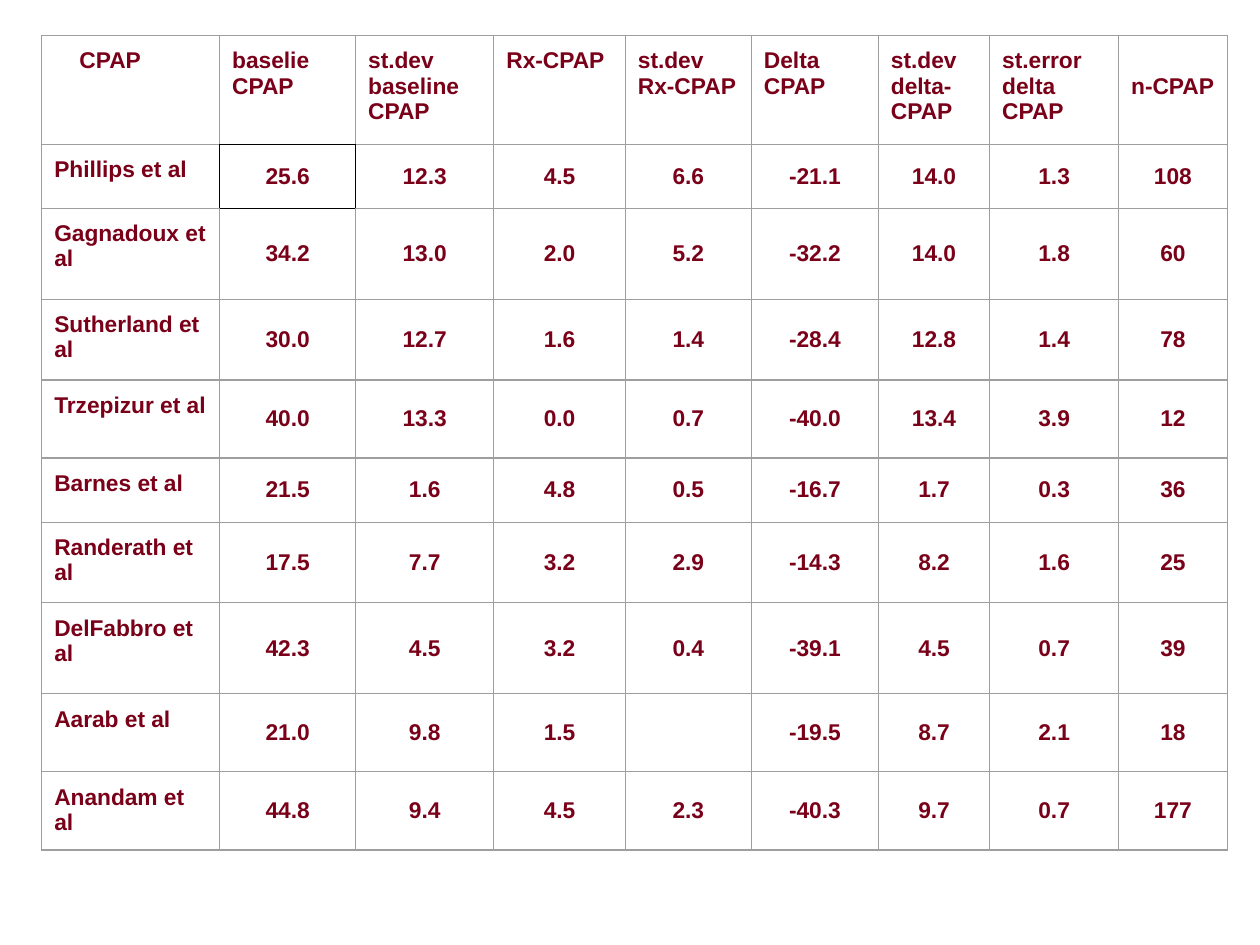
from lxml.etree import SubElement
from pptx import Presentation
from pptx.dml.color import RGBColor
from pptx.enum.text import MSO_ANCHOR, PP_ALIGN
from pptx.oxml.ns import qn
from pptx.util import Pt

COLORS = {"text": "7A0019", "grid": "9E9E9E", "highlight": "000000"}
COLUMN_WIDTHS = [101.7, 77.7, 79, 75.2, 72, 72.6, 63.6, 73.7, 62.1]
ROW_HEIGHTS = [62, 36.6, 52, 46.2, 44.6, 36.6, 46.2, 52, 44.6, 44.6]
PADDING = 7.2
HIGHLIGHT_CELL = (1, 1)
# Border tag -> row and column offset of the neighbour on that side
SIDES = {"a:lnL": (0, -1), "a:lnR": (0, 1), "a:lnT": (-1, 0), "a:lnB": (1, 0)}

HEADERS = [
    "CPAP", "baselie\nCPAP", "st.dev\nbaseline\nCPAP", "Rx-CPAP",
    "st.dev Rx-CPAP", "Delta\nCPAP", "st.dev\ndelta-\nCPAP",
    "st.error\ndelta\nCPAP", "n-CPAP",
]
STUDIES = [
    ["Phillips et al", "25.6", "12.3", "4.5", "6.6", "-21.1", "14.0", "1.3", "108"],
    ["Gagnadoux et al", "34.2", "13.0", "2.0", "5.2", "-32.2", "14.0", "1.8", "60"],
    ["Sutherland et al", "30.0", "12.7", "1.6", "1.4", "-28.4", "12.8", "1.4", "78"],
    ["Trzepizur et al", "40.0", "13.3", "0.0", "0.7", "-40.0", "13.4", "3.9", "12"],
    ["Barnes et al", "21.5", "1.6", "4.8", "0.5", "-16.7", "1.7", "0.3", "36"],
    ["Randerath et al", "17.5", "7.7", "3.2", "2.9", "-14.3", "8.2", "1.6", "25"],
    ["DelFabbro et al", "42.3", "4.5", "3.2", "0.4", "-39.1", "4.5", "0.7", "39"],
    ["Aarab et al", "21.0", "9.8", "1.5", "", "-19.5", "8.7", "2.1", "18"],
    ["Anandam et al", "44.8", "9.4", "4.5", "2.3", "-40.3", "9.7", "0.7", "177"],
]


def write_text(cell, text, align=PP_ALIGN.LEFT, anchor=MSO_ANCHOR.TOP,
               size=13, bold=True, font="Arial", color="text"):
    """Fill a cell with one paragraph per line of text."""
    cell.vertical_anchor = anchor
    cell.margin_left = cell.margin_right = Pt(PADDING)
    cell.margin_top = cell.margin_bottom = Pt(PADDING)
    tf = cell.text_frame
    tf.text = text
    for p in tf.paragraphs:
        p.alignment = align
        for r in p.runs:
            r.font.name = font
            r.font.size = Pt(size)
            r.font.bold = bold
            r.font.color.rgb = RGBColor.from_string(COLORS[color])


def draw_borders(cell, row, col):
    """Draw the grid lines; every side of the highlighted cell is dark."""
    tc_pr = cell._tc.get_or_add_tcPr()
    for tag, (d_row, d_col) in SIDES.items():
        touching = ((row, col), (row + d_row, col + d_col))
        color = "highlight" if HIGHLIGHT_CELL in touching else "grid"
        ln = SubElement(tc_pr, qn(tag), w=str(Pt(0.75)))
        fill = SubElement(ln, qn("a:solidFill"))
        SubElement(fill, qn("a:srgbClr"), val=COLORS[color])


def add_study_table(slide):
    rows = [HEADERS, *STUDIES]
    table = slide.shapes.add_table(
        len(rows), len(HEADERS), Pt(23.8), Pt(20.4),
        Pt(sum(COLUMN_WIDTHS)), Pt(sum(ROW_HEIGHTS))).table
    table.first_row = table.horz_banding = False
    for column, width in zip(table.columns, COLUMN_WIDTHS):
        column.width = Pt(width)
    for row, height in zip(table.rows, ROW_HEIGHTS):
        row.height = Pt(height)

    for r, values in enumerate(rows):
        for c, text in enumerate(values):
            cell = table.cell(r, c)
            if r == 0 or c == 0:
                write_text(cell, text)
            else:
                write_text(cell, text, align=PP_ALIGN.CENTER, anchor=MSO_ANCHOR.MIDDLE)
            draw_borders(cell, r, c)
            cell.fill.background()

    # The first heading is indented, the last one starts a line lower
    table.cell(0, 0).margin_left = Pt(PADDING + 14.4)
    table.cell(0, len(HEADERS) - 1).margin_top = Pt(PADDING + 14.8)


def main():
    prs = Presentation()
    prs.slide_width, prs.slide_height = Pt(720), Pt(540)
    s = prs.slides.add_slide(prs.slide_layouts[6])
    add_study_table(s)
    prs.save("out.pptx")


if __name__ == "__main__":
    main()
